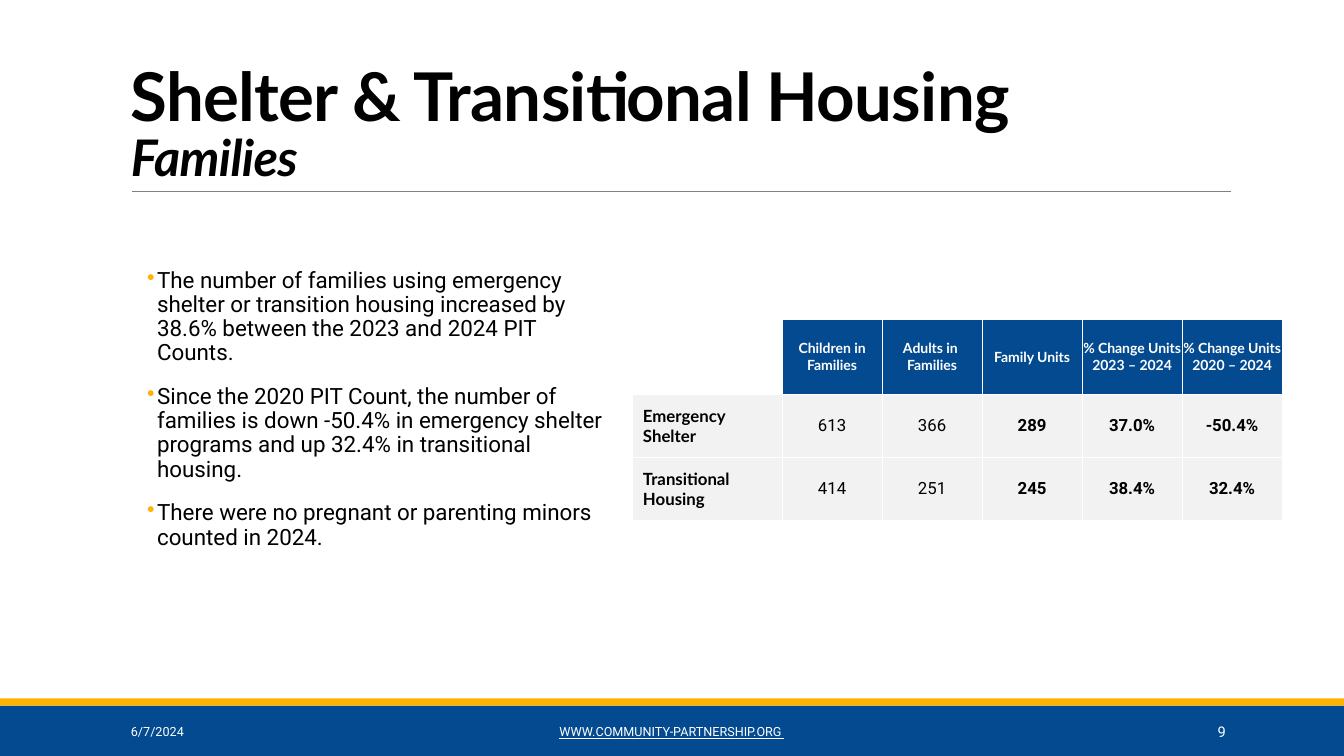
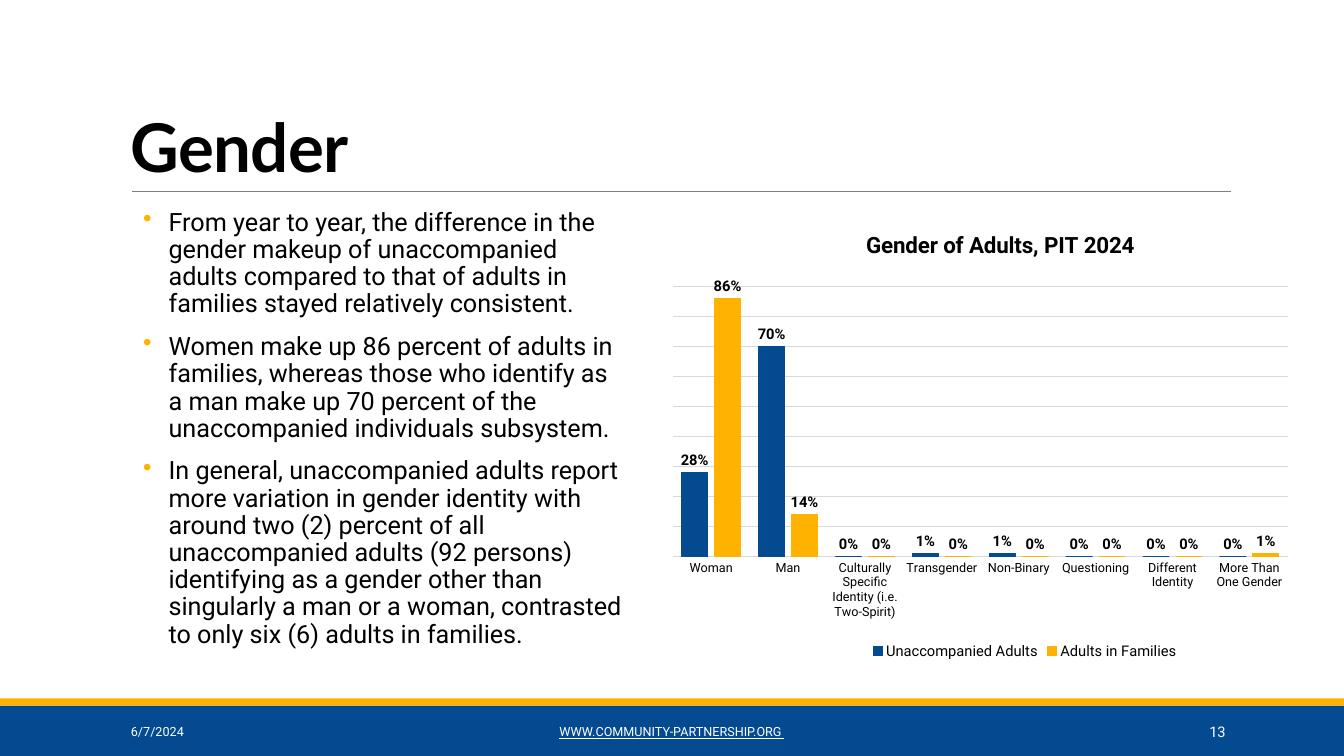
from lxml.etree import SubElement
from pptx import Presentation
from pptx.chart.data import CategoryChartData
from pptx.dml.color import RGBColor
from pptx.enum.chart import XL_CHART_TYPE, XL_LABEL_POSITION, XL_LEGEND_POSITION, XL_TICK_MARK
from pptx.enum.shapes import MSO_CONNECTOR, MSO_SHAPE
from pptx.enum.text import MSO_ANCHOR, PP_ALIGN
from pptx.oxml.ns import qn
from pptx.util import Cm, Pt

BLUE, GOLD, BLACK, WHITE = "034A90", "FFB200", "000000", "FFFFFF"
RULE_GRAY, GRID_GRAY, CELL_GRAY = "808080", "D9D9D9", "F2F2F2"
HEADING, BODY = "Lato", "Roboto"
WIDTH, HEIGHT = 33.87, 19.05


def rgb(value):
    """Turn a hex string into a colour."""
    return RGBColor.from_string(value)


def style(font, size, color=BLACK, name=BODY, bold=False):
    """Set the look of a font."""
    font.size, font.name, font.bold = Pt(size), name, bold
    font.color.rgb = rgb(color)


def place(parent, index, **fractions):
    """Give a chart part a manual layout in fractions of the chart."""
    old = parent.find(qn("c:layout"))
    if old is not None:
        parent.remove(old)
    layout = SubElement(parent, qn("c:layout"))
    parent.insert(index, layout)
    manual = SubElement(layout, qn("c:manualLayout"))
    if "w" in fractions:
        SubElement(manual, qn("c:layoutTarget"), val="inner")
    for mode in ("xMode", "yMode"):
        SubElement(manual, qn(f"c:{mode}"), val="edge")
    for key, value in fractions.items():
        SubElement(manual, qn(f"c:{key}"), val=str(value))


class Deck:
    """Holds the presentation, its style and the current slide."""

    def __init__(self):
        """Start a wide presentation."""
        self.presentation = Presentation()
        self.presentation.slide_width = Cm(WIDTH)
        self.presentation.slide_height = Cm(HEIGHT)
        self.shapes = None

    def slide(self, title, number, subtitle=None):
        """Add a slide with its bands, rule, title and footer."""
        blank = self.presentation.slide_layouts[6]
        self.shapes = self.presentation.slides.add_slide(blank).shapes
        self.band(17.78, 1.27, BLUE)
        self.band(17.6, 0.18, GOLD)
        self.rule(3.33, 31.01, 4.83)
        self.title(title, subtitle)
        self.footer("6/7/2024", 3.05, 6.86)
        self.footer("WWW.COMMUNITY-PARTNERSHIP.ORG ", 10.24, 13.39,
                    PP_ALIGN.CENTER, underline=True)
        self.footer(str(number), 27.51, 3.63, PP_ALIGN.RIGHT, size=10.5)

    def band(self, top, height, color):
        """Draw a band over the full width."""
        band = self.shapes.add_shape(MSO_SHAPE.RECTANGLE, 0, Cm(top), Cm(WIDTH), Cm(height))
        band.shadow.inherit = False
        band.fill.solid()
        band.fill.fore_color.rgb = rgb(color)
        band.line.fill.background()

    def rule(self, left, right, top):
        """Draw the thin line under the title."""
        rule = self.shapes.add_connector(
            MSO_CONNECTOR.STRAIGHT, Cm(left), Cm(top), Cm(right), Cm(top))
        rule.line.color.rgb = rgb(RULE_GRAY)
        rule.line.width = Pt(0.5)
        SubElement(rule._element.spPr, qn("a:effectLst"))

    def text_frame(self, left, top, width, height, anchor=MSO_ANCHOR.TOP):
        """Add a wrapping text box and return its frame."""
        frame = self.shapes.add_textbox(Cm(left), Cm(top), Cm(width), Cm(height)).text_frame
        frame.word_wrap = True
        frame.vertical_anchor = anchor
        return frame

    def title(self, title, subtitle):
        """Write the title and, below it, an italic subtitle."""
        frame = self.text_frame(3.05, 0.79, 27.94, 4.04, MSO_ANCHOR.BOTTOM)
        frame.text = f"{title}\v{subtitle}" if subtitle else title
        heading = frame.paragraphs[0]
        heading.line_spacing = 0.85
        for run, size in zip(heading.runs, (48, 36)):
            style(run.font, size, name=HEADING, bold=True)
            run.font.italic = size == 36
            run._r.get_or_add_rPr().set("spc", "-50")

    def footer(self, text, left, width, align=PP_ALIGN.LEFT, size=9, underline=False):
        """Write one footer entry on the blue band."""
        frame = self.text_frame(left, 17.93, width, 1.02, MSO_ANCHOR.MIDDLE)
        frame.text = text
        entry = frame.paragraphs[0]
        entry.alignment = align
        style(entry.runs[0].font, size, WHITE)
        entry.runs[0].font.underline = underline

    def bullets(self, points, box, size, indent, before, after=0, insets=(0, 0.13)):
        """Write a list with gold bullets."""
        frame = self.text_frame(*box)
        frame.margin_left = frame.margin_right = Cm(insets[0])
        frame.margin_top = frame.margin_bottom = Cm(insets[1])
        frame.text = "\n".join(points)
        for index, point in enumerate(frame.paragraphs):
            properties = point._p.get_or_add_pPr()
            properties.set("marL", str(Cm(indent)))
            properties.set("indent", str(-Cm(indent)))
            bullet_color = SubElement(properties, qn("a:buClr"))
            SubElement(bullet_color, qn("a:srgbClr"), val=GOLD)
            SubElement(properties, qn("a:buChar"), char="•")
            point.line_spacing = 0.9
            point.space_before = Pt(before if index else 0)
            point.space_after = Pt(after)
            style(point.runs[0].font, size)

    def table(self, rows, left, top, widths, heights):
        """Add a table with a blue header row and gray body rows."""
        table = self.shapes.add_table(
            len(rows), len(widths), Cm(left), Cm(top),
            Cm(sum(widths)), Cm(sum(heights))).table
        table.first_row = table.horz_banding = False
        for column, width in zip(table.columns, widths):
            column.width = Cm(width)
        for row, height in zip(table.rows, heights):
            row.height = Cm(height)
        for r, texts in enumerate(rows):
            for c, text in enumerate(texts):
                self.cell(table.cell(r, c), text, r, c)

    def cell(self, cell, text, row, column):
        """Fill and style one table cell."""
        properties = cell._tc.get_or_add_tcPr()
        for side in ("lnL", "lnR", "lnT", "lnB"):
            border = SubElement(properties, qn(f"a:{side}"), w=str(Pt(0.75)))
            SubElement(SubElement(border, qn("a:solidFill")), qn("a:srgbClr"), val=WHITE)
        cell.vertical_anchor = MSO_ANCHOR.MIDDLE
        if not text:
            cell.fill.background()
            return
        cell.fill.solid()
        cell.fill.fore_color.rgb = rgb(CELL_GRAY if row else BLUE)
        if column:
            cell.margin_left = cell.margin_right = cell.margin_top = cell.margin_bottom = 0
        cell.text_frame.text = text
        for line in cell.text_frame.paragraphs:
            line.alignment = PP_ALIGN.CENTER if column else PP_ALIGN.LEFT
            font = line.runs[0].font
            if row == 0:
                style(font, 10, WHITE, HEADING, True)
            elif column == 0:
                style(font, 12, name=HEADING, bold=True)
            else:
                style(font, 12, bold=column > 2)

    def column_chart(self, title, categories, series, box):
        """Add a clustered column chart of percentages."""
        data = CategoryChartData(number_format="0%")
        data.categories = categories
        for name, values, _ in series:
            data.add_series(name, values)
        chart = self.shapes.add_chart(
            XL_CHART_TYPE.COLUMN_CLUSTERED, *map(Cm, box), data).chart
        style(chart.font, 10)

        chart.has_title = True
        heading = chart.chart_title.text_frame
        heading.text = title
        style(heading.paragraphs[0].runs[0].font, 16, bold=True)
        place(chart.chart_title._element, 1, x=0.3, y=0.05)

        chart.has_legend = True
        chart.legend.position = XL_LEGEND_POSITION.BOTTOM
        chart.legend.include_in_layout = False
        style(chart.legend.font, 10.5)
        place(chart.legend._element, 1, x=0.31, y=0.94)
        place(chart._chartSpace.chart.plotArea, 0, x=0, y=0.18, w=0.974, h=0.583)

        names = chart.category_axis
        names.major_tick_mark = XL_TICK_MARK.NONE
        style(names.tick_labels.font, 9)
        shares = chart.value_axis
        shares.visible = False
        shares.minimum_scale, shares.maximum_scale, shares.major_unit = 0, 0.9, 0.1
        for line in (names.format.line, shares.major_gridlines.format.line):
            line.color.rgb = rgb(GRID_GRAY)
            line.width = Pt(0.75)

        plot = chart.plots[0]
        plot.gap_width, plot.overlap, plot.vary_by_categories = 70, -27, False
        for group, (_, _, color) in zip(plot.series, series):
            group.format.fill.solid()
            group.format.fill.fore_color.rgb = rgb(color)
            group.format.line.color.rgb = rgb(color)
            group.format.line.width = Pt(0.75)
            labels = group.data_labels
            labels.show_value = True
            labels.position = XL_LABEL_POSITION.OUTSIDE_END
            labels.number_format, labels.number_format_is_linked = "0%", False
            style(labels.font, 10.5, bold=True)


def main():
    """Build both slides and save them."""
    deck = Deck()

    deck.slide("Shelter & Transitional Housing", 9, "Families")
    deck.table(
        [("", "Children in Families", "Adults in \nFamilies", "Family Units",
          "% Change Units \n2023 – 2024", "% Change Units\n2020 – 2024"),
         ("Emergency Shelter", "613", "366", "289", "37.0%", "-50.4%"),
         ("Transitional Housing", "414", "251", "245", "38.4%", "32.4%")],
        15.95, 8.05, [3.76] + [2.52] * 5, [1.88, 1.59, 1.59])
    deck.bullets(
        ["The number of families using emergency shelter or transition housing increased by "
         "38.6% between the 2023 and 2024 PIT Counts.",
         "Since the 2020 PIT Count, the number of families is down -50.4% in emergency shelter "
         "programs and up 32.4% in transitional housing.",
         "There were no pregnant or parenting minors counted in 2024."],
        (3.71, 6.65, 11.63, 7.85), size=16, indent=0.25, before=12, after=2)

    deck.slide("Gender", 13)
    deck.bullets(
        ["From year to year, the difference in the gender makeup of unaccompanied adults "
         "compared to that of adults in families stayed relatively consistent.",
         "Women make up 86 percent of adults in families, whereas those who identify as a man "
         "make up 70 percent of the unaccompanied individuals subsystem.",
         "In general, unaccompanied adults report more variation in gender identity with around "
         "two (2) percent of all unaccompanied adults (92 persons) identifying as a gender other "
         "than singularly a man or a woman, contrasted to only six (6) adults in families."],
        (3.33, 5.13, 12.73, 12.29), size=18, indent=0.64, before=11, insets=(0.28, 0.15))
    deck.column_chart(
        "Gender of Adults, PIT 2024",
        ["Woman", "Man", "Culturally Specific Identity (i.e. Two-Spirit)", "Transgender",
         "Non-Binary", "Questioning", "Different Identity", "More Than One Gender"],
        [("Unaccompanied Adults", (0.28, 0.7, 0, 0.01, 0.01, 0, 0, 0), BLUE),
         ("Adults in Families", (0.86, 0.14, 0, 0, 0, 0, 0, 0.01), GOLD)],
        (16.94, 5.13, 15.93, 11.66))

    deck.presentation.save("out.pptx")


if __name__ == "__main__":
    main()
